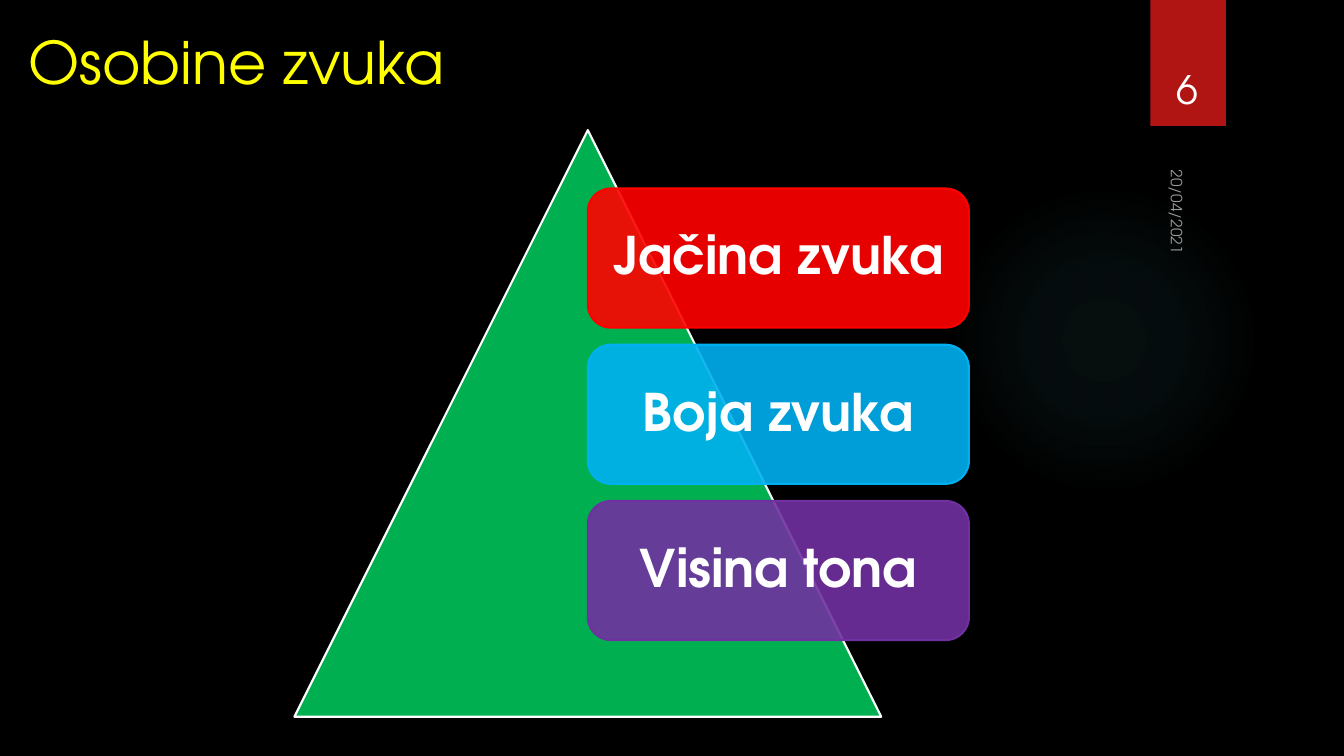
"""Build a slide on the properties of sound: a triangle with three labelled cards."""
from lxml import etree
from pptx import Presentation
from pptx import util as u
from pptx.dml.color import RGBColor
from pptx.enum import shapes, text
from pptx.oxml import parse_xml
from pptx.oxml.ns import nsdecls, qn

FONT = "TeX Gyre Adventor"
BLACK = RGBColor(0x00, 0x00, 0x00)
WHITE = RGBColor(0xFF, 0xFF, 0xFF)
YELLOW = RGBColor(0xFF, 0xFF, 0x00)
GREEN = RGBColor(0x00, 0xB0, 0x50)
RED = RGBColor(0xFF, 0x00, 0x00)
BLUE = RGBColor(0x00, 0xB0, 0xF0)
PURPLE = RGBColor(0x70, 0x30, 0xA0)
RIBBON = RGBColor(0xB0, 0x15, 0x13)
GLOW = RGBColor(0x50, 0xB9, 0xC1)
CARDS = [("Jačina zvuka", RED), ("Boja zvuka", BLUE), ("Visina tona", PURPLE)]
CARD_TOP, CARD_STEP = 1.87, 1.55


def set_alpha(fill, percent):
    color = fill._xPr.find(qn("a:solidFill"))[0]
    etree.SubElement(color, qn("a:alpha")).set("val", str(percent * 1000))


def add_shape(s, kind, box, color, line=None):
    sp = s.shapes.add_shape(kind, *map(u.Inches, box))
    sp.shadow.inherit = False
    sp.fill.solid()
    sp.fill.fore_color.rgb = color
    if line is None:
        sp.line.fill.background()
    else:
        sp.line.color.rgb = line
        sp.line.width = u.Pt(1.5)
    return sp


def set_text(sp, words, size, color, bold=False):
    tf = sp.text_frame
    tf.text = words
    p = tf.paragraphs[0]
    r = p.runs[0]
    r.font.name = FONT
    r.font.size = u.Pt(size)
    r.font.bold = bold
    r.font.color.rgb = color
    return tf, p, r


def add_text(s, box, words, size, color):
    sp = s.shapes.add_textbox(*map(u.Inches, box))
    sp.text_frame.word_wrap = True
    return sp, *set_text(sp, words, size, color)


def add_glow(s):
    sp = add_shape(s, shapes.MSO_SHAPE.OVAL, (9.41, 1.83, 3.08, 3.08), GLOW)
    stops = "".join(
        f'<a:gs pos="{pos * 1000}"><a:srgbClr val="{GLOW}">'
        f'<a:alpha val="{alpha * 1000}"/></a:srgbClr></a:gs>'
        for pos, alpha in ((0, 7), (36, 6), (69, 0), (100, 0)))
    grad = parse_xml(
        f'<a:gradFill {nsdecls("a")} rotWithShape="1"><a:gsLst>{stops}</a:gsLst>'
        '<a:path path="circle"><a:fillToRect l="50000" t="50000" r="50000" b="50000"/>'
        '</a:path></a:gradFill>')
    spPr = sp._element.spPr
    spPr.replace(spPr.find(qn("a:solidFill")), grad)


def add_title(s, words):
    sp = s.shapes.title
    sp.left, sp.top, sp.width, sp.height = map(u.Inches, (0.18, 0.2, 12, 1.15))
    tf, p, r = set_text(sp, words, 42, YELLOW)
    tf.vertical_anchor = text.MSO_ANCHOR.TOP
    p.alignment = text.PP_ALIGN.LEFT


def add_date(s, words):
    sp, tf, p, r = add_text(s, (11.11, 1.96, 1.08, 0.33), words, 11, WHITE)
    sp.rotation = 90
    set_alpha(r.font.fill, 60)


def add_number(s, words):
    sp, tf, p, r = add_text(s, (11.32, 0.32, 0.92, 0.84), words, 28, WHITE)
    tf.vertical_anchor = text.MSO_ANCHOR.BOTTOM
    p.alignment = text.PP_ALIGN.CENTER


def add_card(s, top, words, color):
    sp = add_shape(s, shapes.MSO_SHAPE.ROUNDED_RECTANGLE, (5.83, top, 3.78, 1.38), color, color)
    set_alpha(sp.fill, 90)
    tf, p, r = set_text(sp, words, 37, WHITE, bold=True)
    tf.word_wrap = False
    tf.vertical_anchor = text.MSO_ANCHOR.MIDDLE
    tf.margin_left = tf.margin_right = tf.margin_top = tf.margin_bottom = u.Inches(0.15)
    p.alignment = text.PP_ALIGN.CENTER
    p.line_spacing = 0.9


def main():
    prs = Presentation()
    prs.slide_width, prs.slide_height = u.Inches(13.33), u.Inches(7.5)
    s = prs.slides.add_slide(prs.slide_layouts[5])
    s.background.fill.solid()
    s.background.fill.fore_color.rgb = BLACK
    add_glow(s)
    add_shape(s, shapes.MSO_SHAPE.RECTANGLE, (11.41, 0, 0.75, 1.25), RIBBON)
    add_title(s, "Osobine zvuka")
    add_date(s, "20/04/2021")
    add_number(s, "6")
    add_shape(s, shapes.MSO_SHAPE.ISOSCELES_TRIANGLE, (2.92, 1.29, 5.82, 5.82), GREEN, WHITE)
    for i, (words, color) in enumerate(CARDS):
        add_card(s, CARD_TOP + i * CARD_STEP, words, color)
    prs.save("out.pptx")


if __name__ == "__main__":
    main()
